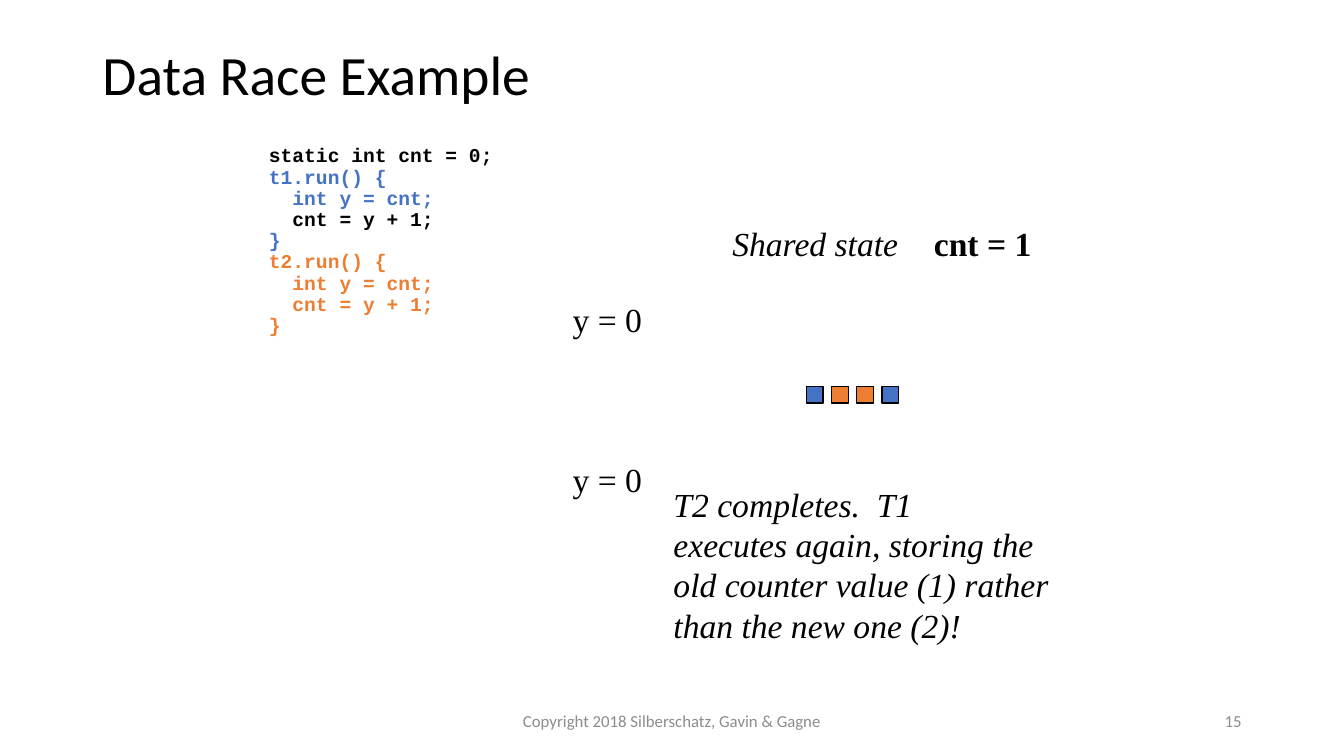
from dataclasses import dataclass

from pptx import Presentation
from pptx.dml.color import RGBColor
from pptx.enum import shapes, text
from pptx.util import Pt

COLORS = {"black": "000000", "blue": "4472C4", "orange": "ED7D31", "gray": "8C8C8C"}
LEFT, CENTER, RIGHT = text.PP_ALIGN.LEFT, text.PP_ALIGN.CENTER, text.PP_ALIGN.RIGHT
TOP, MIDDLE, BOTTOM = (text.MSO_ANCHOR.TOP, text.MSO_ANCHOR.MIDDLE,
                       text.MSO_ANCHOR.BOTTOM)


@dataclass(frozen=True)
class Style:
    font: str
    size: float
    color: str = "black"
    bold: bool = False
    italic: bool = False
    align: text.PP_ALIGN = LEFT
    anchor: text.MSO_ANCHOR = TOP
    spacing: float = 1.0
    wrap: bool = True


@dataclass(frozen=True)
class Label:
    """Lines of text in one box; colors, if given, holds one color per line."""
    lines: tuple[str, ...]
    left: float
    top: float
    width: float
    height: float
    style: Style
    colors: tuple[str, ...] = ()


TITLE = Style("Calibri", 39.6, anchor=BOTTOM, spacing=0.9)
CODE = Style("Courier New", 14, bold=True, spacing=0.9)
VALUE = Style("Times New Roman", 24, wrap=False)
SHARED = Style("Times New Roman", 24, bold=True, wrap=False)
REMARK = Style("Times New Roman", 24, italic=True, wrap=False)
FOOTER = Style("Calibri", 12, "gray", align=CENTER, anchor=MIDDLE)
PAGE = Style("Calibri", 12, "gray", align=RIGHT, anchor=MIDDLE)

HEADING = Label(("Data Race Example",), 66, 28.8, 828, 51.6, TITLE)
LABELS = [
    Label(("static int cnt = 0;",
           "t1.run() {", "  int y = cnt;", "  cnt = y + 1;", "}",
           "t2.run() {", "  int y = cnt;", "  cnt = y + 1;", "}"),
          185, 100.8, 317.5, 352.8, CODE,
          ("black", "blue", "blue", "black", "blue") + ("orange",) * 4),
    Label(("cnt = 1",), 660, 156, 84, 36, SHARED),
    Label(("T2 completes.  T1", "executes again, storing the",
           "old counter value (1) rather", "than the new one (2)!"),
          474, 342, 285, 124, REMARK),
    Label(("Shared state",), 516, 156, 134, 36, REMARK),
    Label(("y = 0",), 402, 210, 64, 36, VALUE),
    Label(("y = 0",), 402, 324, 64, 36, VALUE),
    Label(("Copyright 2018 Silberschatz, Gavin & Gagne",), 318, 500.5, 324, 28.75, FOOTER),
    Label(("15",), 678, 500.5, 216, 28.75, PAGE),
]

SCHEDULE = ("blue", "orange", "orange", "blue")
STEP_LEFT, STEP_TOP, STEP_SIZE, STEP_PITCH = 576, 276, 12, 18


def rgb(name: str) -> RGBColor:
    return RGBColor.from_string(COLORS[name])


def write_label(sp, label: Label) -> None:
    """Place a text box or placeholder and fill it with the label's lines."""
    style = label.style
    sp.left, sp.top = Pt(label.left), Pt(label.top)
    sp.width, sp.height = Pt(label.width), Pt(label.height)
    tf = sp.text_frame
    tf.text = "\n".join(label.lines)
    tf.word_wrap = style.wrap
    tf.auto_size = text.MSO_AUTO_SIZE.NONE
    tf.vertical_anchor = style.anchor
    colors = label.colors or (style.color,) * len(label.lines)
    for p, color in zip(tf.paragraphs, colors):
        p.alignment = style.align
        p.line_spacing = style.spacing
        p.font.name = style.font
        p.font.size = Pt(style.size)
        p.font.bold = style.bold
        p.font.italic = style.italic
        p.font.color.rgb = rgb(color)


def add_step(s, index: int, color: str) -> None:
    """Add one square of the thread schedule."""
    sp = s.shapes.add_shape(shapes.MSO_SHAPE.RECTANGLE,
                            Pt(STEP_LEFT + index * STEP_PITCH), Pt(STEP_TOP),
                            Pt(STEP_SIZE), Pt(STEP_SIZE))
    sp.shadow.inherit = False
    sp.fill.solid()
    sp.fill.fore_color.rgb = rgb(color)
    sp.line.color.rgb = rgb("black")
    sp.line.width = Pt(1)


def main() -> None:
    prs = Presentation()
    prs.slide_width, prs.slide_height = Pt(960), Pt(540)
    s = prs.slides.add_slide(prs.slide_layouts.get_by_name("Title Only"))
    write_label(s.shapes.title, HEADING)
    for label in LABELS:
        write_label(s.shapes.add_textbox(0, 0, 0, 0), label)
    for index, color in enumerate(SCHEDULE):
        add_step(s, index, color)
    prs.save("out.pptx")


if __name__ == "__main__":
    main()
